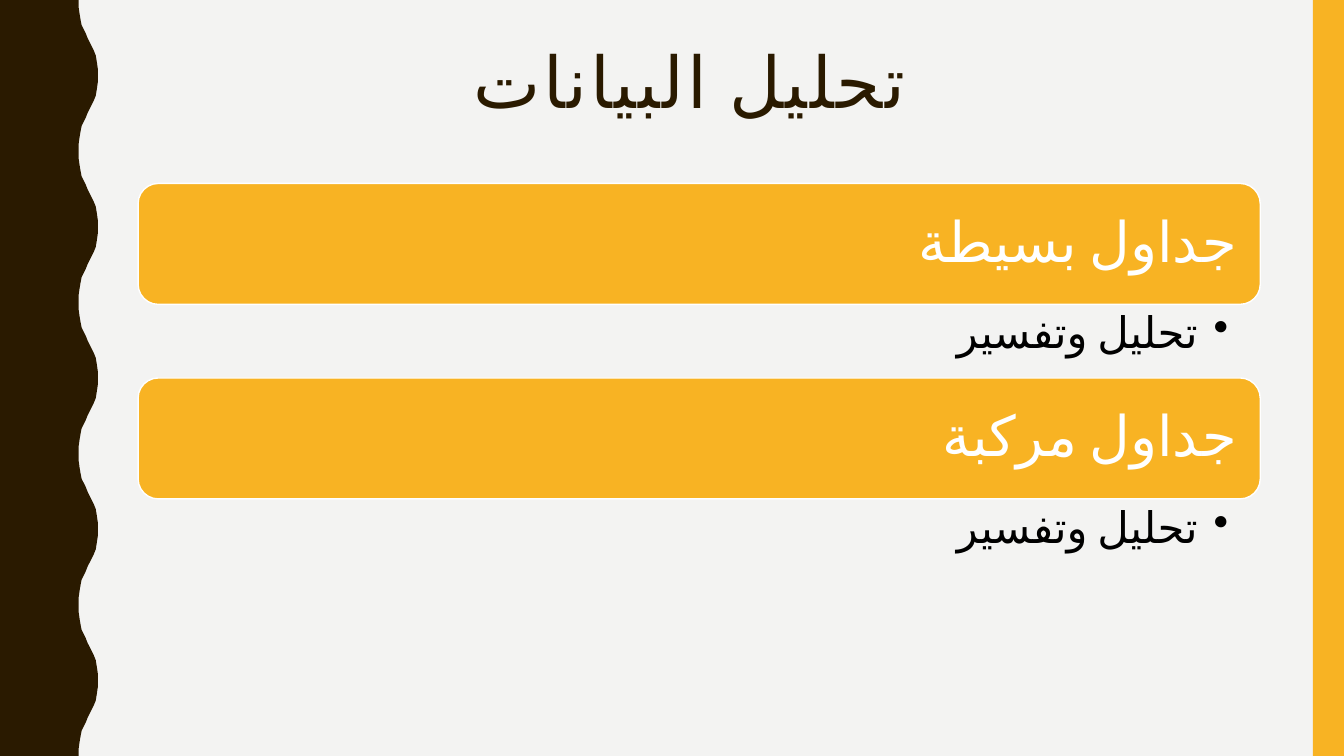
from lxml import etree
from pptx import Presentation
from pptx.dml.color import RGBColor
from pptx.enum.shapes import MSO_SHAPE
from pptx.enum.text import MSO_ANCHOR, PP_ALIGN
from pptx.oxml.ns import qn
from pptx.util import Inches, Pt

BROWN = RGBColor(0x2A, 0x1A, 0x00)
AMBER = RGBColor(0xF8, 0xB3, 0x23)
PAPER = RGBColor(0xF3, 0xF3, 0xF2)
WHITE = RGBColor(0xFF, 0xFF, 0xFF)
BLACK = RGBColor(0x00, 0x00, 0x00)

RECTANGLE = MSO_SHAPE.RECTANGLE
ROUNDED = MSO_SHAPE.ROUNDED_RECTANGLE
TOP, MIDDLE = MSO_ANCHOR.TOP, MSO_ANCHOR.MIDDLE
CENTER, RIGHT = PP_ALIGN.CENTER, PP_ALIGN.RIGHT

WIDTH, HEIGHT = 13.33, 7.5
LEFT, COLUMN = 1.37, 11.13
FIRST_ROW, BAR_HEIGHT, DETAIL_HEIGHT = 1.82, 1.2, 0.72
ROW_STEP = BAR_HEIGHT + DETAIL_HEIGHT + 0.01
STRIPE = 0.31
BULLET_INDENT = 0.31

WAVES = 5
WAVE_PERIOD = HEIGHT / WAVES
HALF_WAVE = [
    (0.78, 0), (0.78, 0.07), (0.79, 0.14), (0.8, 0.2), (0.81, 0.25),
    (0.83, 0.29), (0.85, 0.33), (0.87, 0.38), (0.89, 0.42), (0.91, 0.46),
    (0.93, 0.5), (0.95, 0.55), (0.96, 0.61), (0.97, 0.68), (0.97, 0.75),
]

SECTIONS = [
    ("جداول بسيطة ", "تحليل وتفسير "),
    ("جداول مركبة", "تحليل وتفسير "),
]


def paint(shape, fill, line=None):
    shape.shadow.inherit = False
    shape.fill.solid()
    shape.fill.fore_color.rgb = fill
    if line is None:
        shape.line.fill.background()
    else:
        shape.line.color.rgb = line
        shape.line.width = Pt(1)


def add_block(page, preset, left, top, width, height, fill, line=None):
    block = page.shapes.add_shape(
        preset, Inches(left), Inches(top), Inches(width), Inches(height))
    paint(block, fill, line)
    return block


def add_box(page, top, height):
    return page.shapes.add_textbox(
        Inches(LEFT), Inches(top), Inches(COLUMN), Inches(height))


def add_wavy_edge(page):
    wave = HALF_WAVE + [(x, WAVE_PERIOD - y) for x, y in HALF_WAVE[-2:0:-1]]
    points = [(x, y + WAVE_PERIOD * turn) for turn in range(WAVES) for x, y in wave]
    points += [(HALF_WAVE[0][0], HEIGHT), (0, HEIGHT)]
    builder = page.shapes.build_freeform(0, 0, scale=1.0)
    builder.add_line_segments([(Inches(x), Inches(y)) for x, y in points], close=True)
    paint(builder.convert_to_shape(), BROWN)


def set_frame(shape, anchor, insets):
    frame = shape.text_frame
    frame.word_wrap = True
    frame.vertical_anchor = anchor
    (frame.margin_left, frame.margin_top,
     frame.margin_right, frame.margin_bottom) = [Inches(inset) for inset in insets]
    return frame.paragraphs[0]


def write(para, text, font, size, color, align):
    para.alignment = align
    para.line_spacing = 0.9
    span = para.add_run()
    span.text = text
    span.font.name = font
    span.font.size = Pt(size)
    span.font.color.rgb = color
    properties = span.font._element
    properties.set("lang", "ar-SA")
    etree.SubElement(properties, qn("a:cs")).set("typeface", font)
    return span


def set_right_to_left(para, space_after):
    para.space_after = Pt(space_after)
    para._p.get_or_add_pPr().set("rtl", "1")


def add_bullet(para):
    properties = para._p.get_or_add_pPr()
    properties.set("marL", str(Inches(BULLET_INDENT)))
    properties.set("indent", str(-Inches(BULLET_INDENT)))
    etree.SubElement(properties, qn("a:buChar")).set("char", "•")


def add_title(page, text):
    para = set_frame(add_box(page, 0.42, 1.05), TOP, (0.1, 0.05, 0.1, 0.05))
    span = write(para, text, "Arial Narrow", 51, BROWN, CENTER)
    span.font._element.set("spc", "200")


def add_section(page, top, heading, detail):
    bar = add_block(page, ROUNDED, LEFT, top, COLUMN, BAR_HEIGHT, AMBER, WHITE)
    para = set_frame(bar, MIDDLE, (0.17, 0.17, 0.17, 0.17))
    write(para, heading, "Calibri", 40, WHITE, RIGHT)
    set_right_to_left(para, 14)

    box = add_box(page, top + BAR_HEIGHT + 0.01, DETAIL_HEIGHT)
    para = set_frame(box, TOP, (0.35, 0.06, 0.31, 0.06))
    para.level = 1
    write(para, detail, "Calibri", 31, BLACK, RIGHT)
    set_right_to_left(para, 6)
    add_bullet(para)


def main():
    deck = Presentation()
    deck.slide_width, deck.slide_height = Inches(WIDTH), Inches(HEIGHT)
    page = deck.slides.add_slide(deck.slide_layouts[6])
    page.background.fill.solid()
    page.background.fill.fore_color.rgb = PAPER

    add_wavy_edge(page)
    add_block(page, RECTANGLE, WIDTH - STRIPE, 0, STRIPE, HEIGHT, AMBER)
    add_title(page, "تحليل البيانات ")
    for row, (heading, detail) in enumerate(SECTIONS):
        add_section(page, FIRST_ROW + row * ROW_STEP, heading, detail)

    deck.save("out.pptx")


if __name__ == "__main__":
    main()
